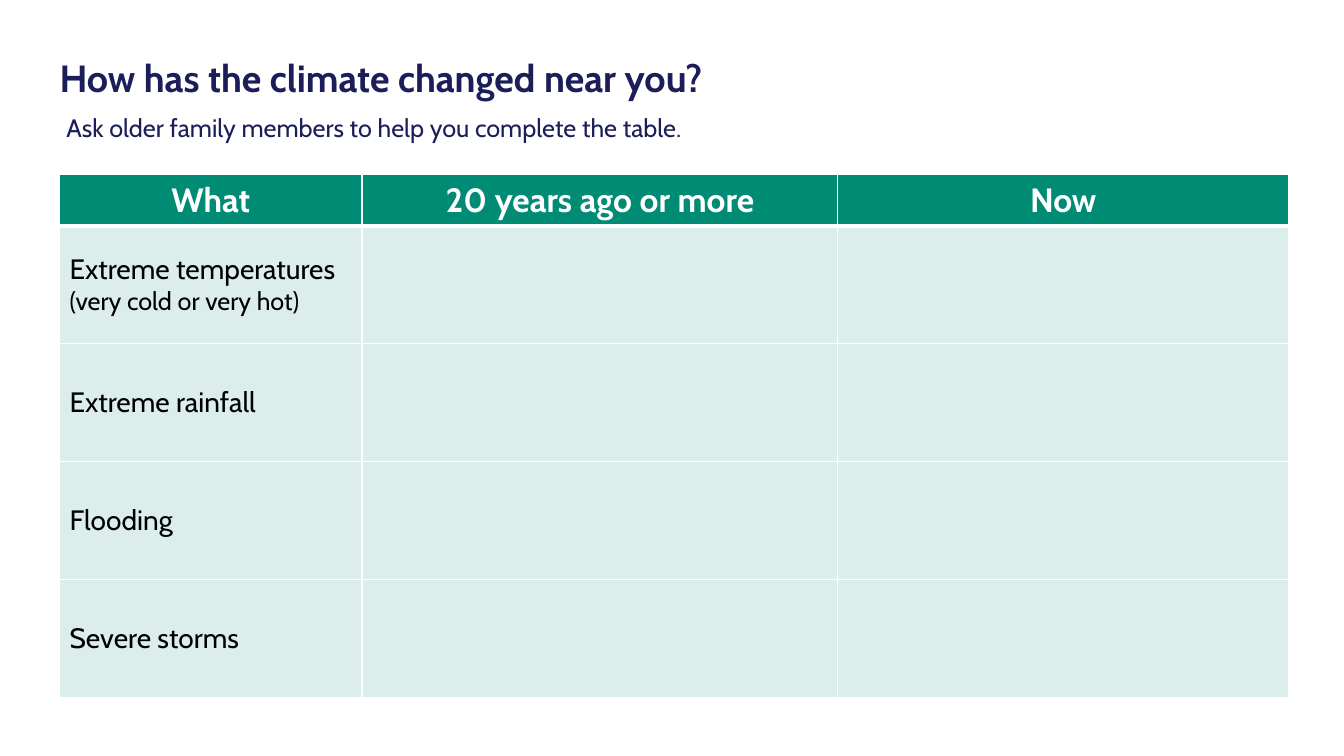
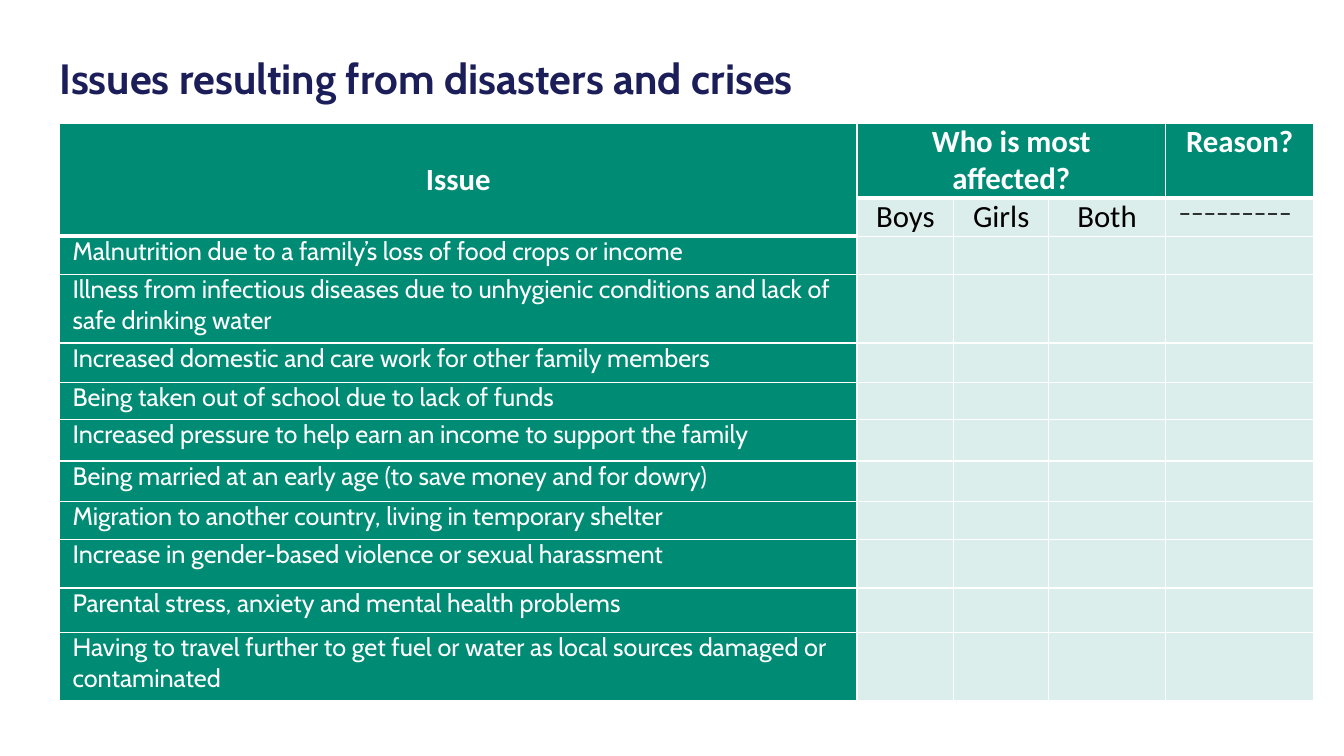
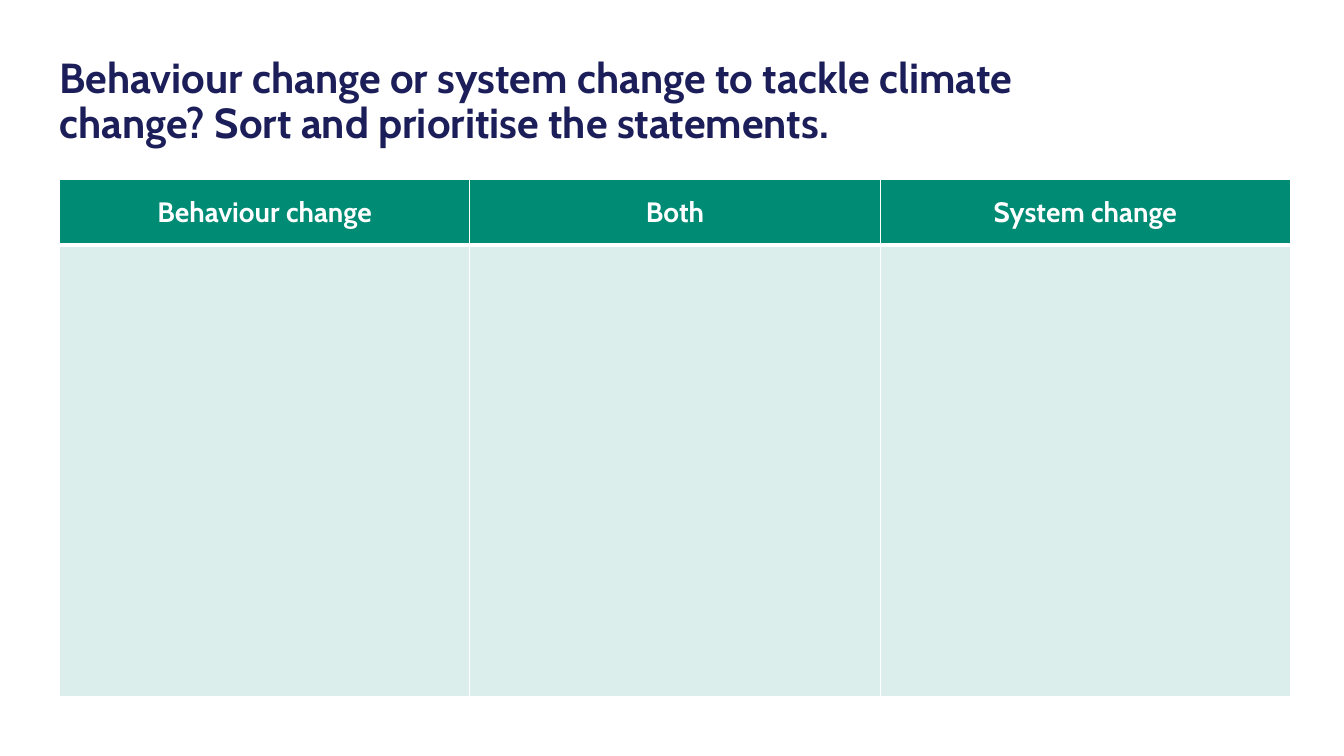
import pptx
import pptx.util
import pptx.dml.color
import pptx.enum.text
import pptx.oxml
import pptx.oxml.ns

COLOURS = {"navy": "1B1E58", "green": "008B75", "white": "FFFFFF", "black": "000000"}
FONT = "Cabin"
LEFT = 0.59
TINT_ALPHA = 14000
CENTER = pptx.enum.text.PP_ALIGN.CENTER
MIDDLE = pptx.enum.text.MSO_ANCHOR.MIDDLE
TOP = pptx.enum.text.MSO_ANCHOR.TOP
Inches = pptx.util.Inches


def style_text(frame, size, colour, bold=False, font=FONT, align=None):
    for para in frame.paragraphs:
        para.alignment = align
        for span in para.runs:
            span.font.size = pptx.util.Pt(size)
            span.font.name = font
            span.font.bold = bold
            span.font.color.rgb = pptx.dml.color.RGBColor.from_string(COLOURS[colour])


def add_grid(page, top, columns, rows, texts, solid, heavy_below, inset=(0.1, 0.05)):
    """Add a table; solid holds full green cells, heavy_below cells with a thick bottom edge."""
    table = page.shapes.add_table(
        len(rows), len(columns), Inches(LEFT), Inches(top),
        Inches(sum(columns)), Inches(sum(rows))).table
    table.horz_banding = False
    for column, width in zip(table.columns, columns):
        column.width = Inches(width)
    for row, height in zip(table.rows, rows):
        row.height = Inches(height)
    for r in range(len(rows)):
        for c in range(len(columns)):
            cell = table.cell(r, c)
            cell.margin_left = cell.margin_right = Inches(inset[0])
            cell.margin_top = cell.margin_bottom = Inches(inset[1])
            cell.vertical_anchor = MIDDLE
            cell.text_frame.text = texts.get((r, c), "")
            # Green fill, see-through outside the solid cells
            cell.fill.solid()
            cell.fill.fore_color.rgb = pptx.dml.color.RGBColor.from_string(COLOURS["green"])
            properties = cell._tc.get_or_add_tcPr()
            if (r, c) not in solid:
                colour = properties.find(".//" + pptx.oxml.ns.qn("a:srgbClr"))
                colour.append(pptx.oxml.parse_xml(
                    f'<a:alpha {pptx.oxml.ns.nsdecls("a")} val="{TINT_ALPHA}"/>'))
            # White borders
            widths = {"L": 1, "R": 1,
                      "T": 3 if (r - 1, c) in heavy_below else 1,
                      "B": 3 if (r, c) in heavy_below else 1}
            for index, (side, width) in enumerate(widths.items()):
                properties.insert(index, pptx.oxml.parse_xml(
                    f'<a:ln{side} {pptx.oxml.ns.nsdecls("a")} w="{pptx.util.Pt(width)}">'
                    f'<a:solidFill><a:srgbClr val="{COLOURS["white"]}"/></a:solidFill>'
                    f'</a:ln{side}>'))
    return table


deck = pptx.Presentation()
deck.slide_width, deck.slide_height = Inches(13.33), Inches(7.5)

# Titles: text, size, width, height, line spacing
titles = [
    ("How has the climate changed near you?", 27, 11.5, 0.41, 0.9),
    ("Issues resulting from disasters and crises", 30.2, 12.43, 0.45, 0.8),
    ("Behaviour change or system change to tackle climate change? "
     "Sort and prioritise the statements.", 30, 10.83, 0.85, 0.9),
]
pages = []
for text, size, width, height, spacing in titles:
    page = deck.slides.add_slide(deck.slide_layouts[5])
    title = page.shapes.title
    title.left, title.top = Inches(LEFT), Inches(0.59)
    title.width, title.height = Inches(width), Inches(height)
    frame = title.text_frame
    frame.text = text
    frame.word_wrap = True
    frame.auto_size = pptx.enum.text.MSO_AUTO_SIZE.NONE
    frame.vertical_anchor = MIDDLE
    frame.margin_left = frame.margin_right = frame.margin_top = frame.margin_bottom = 0
    frame.paragraphs[0].line_spacing = spacing
    frame.paragraphs[0].space_after = pptx.util.Pt(12)
    style_text(frame, size, "navy", bold=True, align=pptx.enum.text.PP_ALIGN.LEFT)
    pages.append(page)
climate_page, issues_page, change_page = pages

# Climate: instruction line
box = climate_page.shapes.add_textbox(Inches(0.56), Inches(1.07), Inches(7.52), Inches(0.4))
box.text_frame.word_wrap = True
box.text_frame.text = "Ask older family members to help you complete the table."
style_text(box.text_frame, 18, "navy")

# Climate: then and now
headings = ["What", "20 years ago or more", "Now"]
events = ["Extreme temperatures\n(very cold or very hot)", "Extreme rainfall",
          "Flooding", "Severe storms"]
texts = {(0, c): heading for c, heading in enumerate(headings)}
texts.update({(r, 0): event for r, event in enumerate(events, 1)})
header = {(0, c) for c in range(3)}
table = add_grid(climate_page, 1.73, [3, 4.72, 4.47], [0.51] + [1.17] * 4,
                 texts, header, header)
for c in range(3):
    style_text(table.cell(0, c).text_frame, 24, "white", bold=True, align=CENTER)
for r in range(1, 5):
    style_text(table.cell(r, 0).text_frame, 20, "black")
remark = table.cell(1, 0).text_frame.paragraphs[1]
remark.runs[0].font.size = pptx.util.Pt(18)

# Issues: who is affected, and why
issues = [
    "Malnutrition due to a family’s loss of food crops or income",
    "Illness from infectious diseases due to unhygienic conditions and lack of safe drinking water",
    "Increased domestic and care work for other family members",
    "Being taken out of school due to lack of funds",
    "Increased pressure to help earn an income to support the family",
    "Being married at an early age (to save money and for dowry)",
    "Migration to another country, living in temporary shelter",
    "Increase in gender-based violence or sexual harassment",
    "Parental stress, anxiety and mental health problems",
    "Having to travel further to get fuel or water as local sources damaged or contaminated",
]
texts = {(0, 0): "Issue", (0, 1): "Who is most affected?", (0, 4): "Reason?",
         (1, 1): "Boys", (1, 2): "Girls", (1, 3): "Both", (1, 4): "–––––––––"}
texts.update({(r, 0): issue for r, issue in enumerate(issues, 2)})
header = {(0, c) for c in range(5)}
table = add_grid(issues_page, 1.22, [7.91, 0.96, 0.94, 1.16, 1.47],
                 [0.72, 0.38, 0.38, 0.68, 0.39, 0.37, 0.41, 0.4, 0.38, 0.48, 0.44, 0.68],
                 texts, header | {(r, 0) for r in range(12)},
                 {(0, c) for c in range(1, 5)} | {(1, 0)}, inset=(0.13, 0))
table.cell(0, 0).merge(table.cell(1, 0))
table.cell(0, 1).merge(table.cell(0, 3))
affected = table.cell(0, 1)
affected.margin_left = affected.margin_right = Inches(0.2)
for c in (0, 1, 4):
    style_text(table.cell(0, c).text_frame, 22, "white", True, "Calibri", CENTER)
for c in (1, 2, 3):
    style_text(table.cell(1, c).text_frame, 22, "black", False, "Calibri", CENTER)
style_text(table.cell(1, 4).text_frame, 18, "black", font="Calibri")
for r in range(12):
    for c in range(5):
        if (r, c) != (0, 0):
            table.cell(r, c).vertical_anchor = TOP
    if r > 1:
        style_text(table.cell(r, 0).text_frame, 18, "white")

# Change: sorting columns
headings = ["Behaviour change", "Both", "System change"]
texts = {(0, c): heading for c, heading in enumerate(headings)}
table = add_grid(change_page, 1.78, [4.07] * 3, [0.65, 4.48], texts, set(texts), set(texts))
for c in range(3):
    style_text(table.cell(0, c).text_frame, 20, "white", bold=True, align=CENTER)

deck.save("out.pptx")
